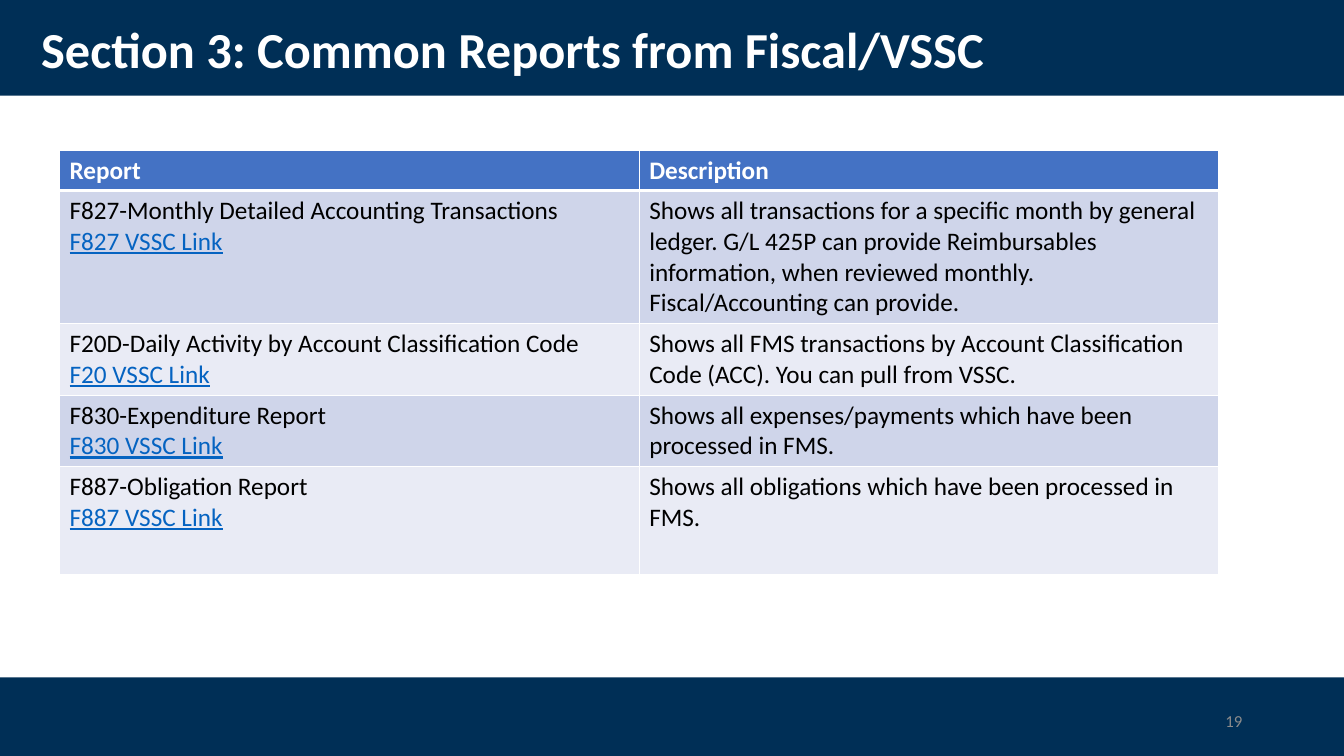
from lxml import etree
from pptx import Presentation
from pptx.dml.color import RGBColor
from pptx.enum import shapes, text
from pptx.oxml import ns
from pptx.util import Inches, Pt

NAVY = RGBColor(0x00, 0x2F, 0x56)
WHITE = RGBColor(0xFF, 0xFF, 0xFF)
BLACK = RGBColor(0x00, 0x00, 0x00)
BLUE = RGBColor(0x44, 0x72, 0xC4)
LINK = RGBColor(0x05, 0x63, 0xC1)
GRAY = RGBColor(0x8C, 0x8C, 0x8C)
BANDS = [RGBColor(0xCF, 0xD5, 0xEA), RGBColor(0xE9, 0xEB, 0xF5)]
HEADS = ["Report", "Description"]
REPORTS = [
    ("F827-Monthly Detailed Accounting Transactions", "F827 VSSC Link",
     ["Shows all transactions for a specific month by general ledger. "
      "G/L 425P can provide Reimbursables information, when reviewed monthly.",
      "Fiscal/Accounting can provide."]),
    ("F20D-Daily Activity by Account Classification Code", "F20 VSSC Link",
     ["Shows all FMS transactions by Account Classification Code (ACC). "
      "You can pull from VSSC."]),
    ("F830-Expenditure Report", "F830 VSSC Link",
     ["Shows all expenses/payments which have been processed in FMS."]),
    ("F887-Obligation Report", "F887 VSSC Link",
     ["Shows all obligations which have been processed in FMS."]),
]
HEIGHTS = [0.4, 1.32, 0.71, 0.71, 1.07]


def write(par, words, size=18, color=BLACK, bold=False, line=False,
          align=text.PP_ALIGN.LEFT, space=1.0):
    """Put formatted words in a paragraph."""
    par.alignment = align
    par.line_spacing = space
    run = par.add_run()
    run.text = words
    font = run.font
    font.name, font.size, font.bold = "Calibri", Pt(size), bold
    font.underline = line
    font.color.rgb = color


def band(slide, top, height):
    """Draw a full-width navy band."""
    bar = slide.shapes.add_shape(shapes.MSO_SHAPE.RECTANGLE, 0, Inches(top),
                                 Inches(13.33), Inches(height))
    bar.shadow.inherit = False
    bar.fill.solid()
    bar.fill.fore_color.rgb = NAVY
    bar.line.fill.background()


def label(slide, words, left, top, width, height, **style):
    """Add a text box centred vertically on its line."""
    box = slide.shapes.add_textbox(*map(Inches, (left, top, width, height)))
    frame = box.text_frame
    frame.word_wrap = True
    frame.vertical_anchor = text.MSO_ANCHOR.MIDDLE
    write(frame.paragraphs[0], words, **style)


def edge(cell, side, width):
    """Add a white border to one side of a cell."""
    props = cell._tc.get_or_add_tcPr()
    line = etree.SubElement(props, ns.qn(f"a:ln{side}"), w=str(Pt(width)))
    fill = etree.SubElement(line, ns.qn("a:solidFill"))
    etree.SubElement(fill, ns.qn("a:srgbClr"), val=str(WHITE))


def fill_cell(cell, fill, lines, base=1):
    """Set the borders, fill and styled lines of a cell."""
    for side, width in zip("LRTB", (1, 1, 1, base)):
        edge(cell, side, width)
    cell.fill.solid()
    cell.fill.fore_color.rgb = fill
    frame = cell.text_frame
    for i, (words, style) in enumerate(lines):
        par = frame.add_paragraph() if i else frame.paragraphs[0]
        write(par, words, **style)


def add_grid(slide):
    """Add the table of reports."""
    grid = slide.shapes.add_table(
        len(HEIGHTS), len(HEADS), Inches(0.59), Inches(1.49),
        Inches(11.5), Inches(sum(HEIGHTS))).table
    for row, height in zip(grid.rows, HEIGHTS):
        row.height = Inches(height)
    for col, head in enumerate(HEADS):
        fill_cell(grid.cell(0, col), BLUE,
                  [(head, {"color": WHITE, "bold": True})], base=3)
    for row, (name, link, about) in enumerate(REPORTS, 1):
        fill = BANDS[(row - 1) % 2]
        fill_cell(grid.cell(row, 0), fill,
                  [(name, {}), (link, {"color": LINK, "line": True})])
        fill_cell(grid.cell(row, 1), fill, [(words, {}) for words in about])


def main():
    """Build the slide and save it."""
    deck = Presentation()
    deck.slide_width, deck.slide_height = Inches(13.33), Inches(7.5)
    slide = deck.slides.add_slide(deck.slide_layouts[6])
    band(slide, 0, 0.95)
    band(slide, 6.72, 0.8)
    label(slide, "Section 3: Common Reports from Fiscal/VSSC",
          0.31, 0.18, 11.5, 0.68, size=36, color=WHITE, bold=True, space=0.9)
    add_grid(slide)
    label(slide, "19", 9.42, 6.95, 3, 0.4, size=12, color=GRAY,
          align=text.PP_ALIGN.RIGHT)
    deck.save("out.pptx")


if __name__ == "__main__":
    main()
